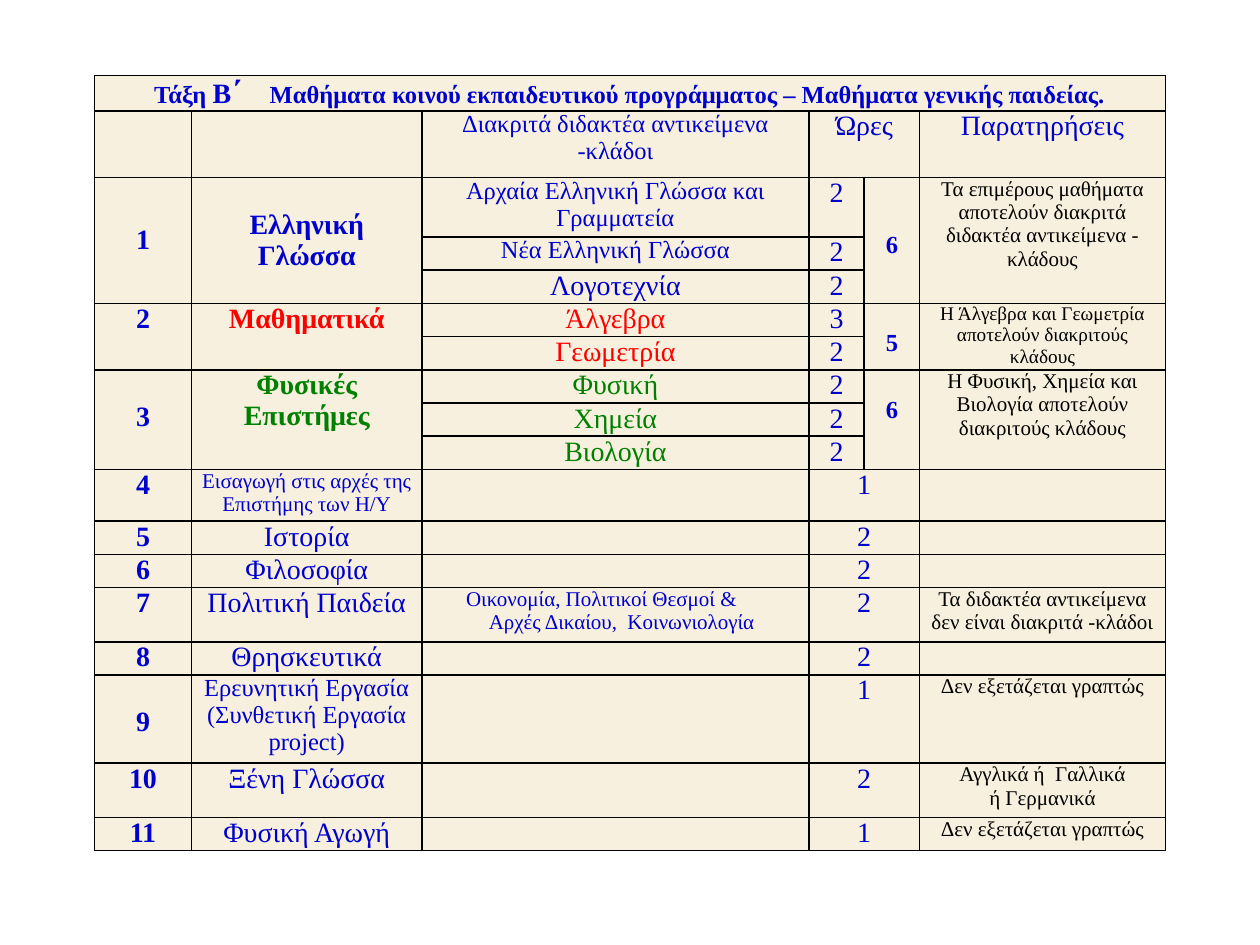
from dataclasses import dataclass

from lxml.etree import SubElement
from pptx import Presentation
from pptx.dml.color import RGBColor
from pptx.enum.text import MSO_ANCHOR as Anchor, PP_ALIGN as Align
from pptx.oxml.ns import qn
from pptx.util import Inches, Pt

BLUE, RED, GREEN, BLACK, CREAM = "0000CC", "FF0000", "008000", "000000", "F7F0DE"
COLUMNS = [0.77, 1.83, 3.07, 0.44, 0.44, 1.95]
NUMBER, SUBJECT, BRANCH, HOURS, TOTAL, NOTE = range(6)
LINE = 19 / 72  # height of a row with one line of 16 pt text
TITLE_ROW, HEADER_ROW = 0.28, 0.53


def rgb(value):
    return RGBColor.from_string(value)


@dataclass
class Subject:
    name: str
    hours: str
    heights: tuple = (LINE,)
    branches: tuple = ()  # (name, size, hours)
    note: str = ""
    size: int = 16
    colour: str = BLUE
    bold: bool = False
    note_size: int = 12
    anchor: Anchor = Anchor.TOP
    number_top: float = 0
    total_top: float = 0


SUBJECTS = [
    Subject("Ελληνική Γλώσσα", "6", (0.47, LINE, LINE),
            (("Αρχαία Ελληνική Γλώσσα και Γραμματεία", 14, "2"),
             ("Νέα Ελληνική Γλώσσα", 14, "2"),
             ("Λογοτεχνία", 16, "2")),
            "Τα επιμέρους μαθήματα αποτελούν διακριτά διδακτέα αντικείμενα - κλάδους",
            bold=True, anchor=Anchor.MIDDLE, total_top=0.43),
    Subject("Μαθηματικά", "5", (LINE, LINE),
            (("Άλγεβρα", 16, "3"), ("Γεωμετρία", 16, "2")),
            "Η Άλγεβρα και Γεωμετρία αποτελούν διακριτούς κλάδους",
            colour=RED, bold=True, note_size=11, total_top=0.21),
    Subject("Φυσικές Επιστήμες", "6", (LINE, LINE, LINE),
            (("Φυσική", 16, "2"), ("Χημεία", 16, "2"), ("Βιολογία", 16, "2")),
            "Η Φυσική, Χημεία και Βιολογία αποτελούν διακριτούς κλάδους",
            colour=GREEN, bold=True, number_top=0.25, total_top=0.21),
    Subject("Εισαγωγή στις αρχές της Επιστήμης των Η/Υ", "1", (0.41,), size=12),
    Subject("Ιστορία", "2"),
    Subject("Φιλοσοφία", "2"),
    Subject("Πολιτική Παιδεία", "2", (0.43,),
            note="Τα διδακτέα αντικείμενα δεν είναι διακριτά -κλάδοι"),
    Subject("Θρησκευτικά", "2"),
    Subject("Ερευνητική Εργασία (Συνθετική Εργασία project)", "1", (0.7,),
            note="Δεν εξετάζεται γραπτώς", size=14, number_top=0.25),
    Subject("Ξένη Γλώσσα", "2", (0.43,), note="Αγγλικά ή  Γαλλικά\nή Γερμανικά"),
    Subject("Φυσική Αγωγή", "1", note="Δεν εξετάζεται γραπτώς"),
]
CIVICS_TOPICS = "Οικονομία, Πολιτικοί Θεσμοί &\nΑρχές Δικαίου,  Κοινωνιολογία"


class TimetableSlide:
    """Holds the slide, its table and the common cell style."""
    font = "Times New Roman"

    def __init__(self, slide):
        self.slide = slide
        self.table = None

    def add_table(self, left, top, widths, heights):
        frame = self.slide.shapes.add_table(
            len(heights), len(widths), Inches(left), Inches(top),
            Inches(sum(widths)), Inches(sum(heights)))
        self.table = frame.table
        self.table.first_row = self.table.horz_banding = False
        for column, width in zip(self.table.columns, widths):
            column.width = Inches(width)
        for row, height in zip(self.table.rows, heights):
            row.height = Inches(height)
        for cell in self.table.iter_cells():
            self.style_cell(cell)

    def style_cell(self, cell):
        properties = cell._tc.get_or_add_tcPr()
        for side in ("a:lnL", "a:lnR", "a:lnT", "a:lnB"):
            border = SubElement(properties, qn(side), w=str(Pt(1)))
            fill = SubElement(border, qn("a:solidFill"))
            SubElement(fill, qn("a:srgbClr"), val=BLACK)
        cell.fill.solid()
        cell.fill.fore_color.rgb = rgb(CREAM)
        cell.margin_left = cell.margin_right = Inches(0.05)
        cell.margin_top = cell.margin_bottom = 0
        # An empty cell must not make its row taller than one line
        SubElement(cell.text_frame.paragraphs[0]._p, qn("a:endParaRPr"), sz="1200")

    def style_run(self, run, size, colour, bold):
        run.font.name = self.font
        run.font.size = Pt(size)
        run.font.bold = bold
        run.font.color.rgb = rgb(colour)

    def merge(self, row, column, rows=1, columns=1):
        cell = self.table.cell(row, column)
        if rows * columns > 1:
            cell.merge(self.table.cell(row + rows - 1, column + columns - 1))
        return cell

    def fill_cell(self, row, column, text, size=16, colour=BLUE, bold=False,
                  rows=1, columns=1, anchor=Anchor.TOP, top=0):
        cell = self.merge(row, column, rows, columns)
        if not text:
            return cell
        cell.text_frame.text = text
        cell.vertical_anchor = anchor
        cell.margin_top = Inches(top)
        for paragraph in cell.text_frame.paragraphs:
            paragraph.alignment = Align.CENTER
            for run in paragraph.runs:
                self.style_run(run, size, colour, bold)
        return cell

    def fill_title(self, parts):
        """Fill the top row with (text, size, letter spacing) parts."""
        paragraph = self.merge(0, 0, columns=len(COLUMNS)).text_frame.paragraphs[0]
        paragraph.alignment = Align.CENTER
        for text, size, spacing in parts:
            run = paragraph.add_run()
            run.text = text
            self.style_run(run, size, BLUE, True)
            if spacing:
                run._r.get_or_add_rPr().set("spc", str(spacing * 100))

    def fill_subject(self, row, number, subject):
        span = len(subject.heights)
        self.fill_cell(row, NUMBER, str(number), bold=True, rows=span,
                       anchor=subject.anchor, top=subject.number_top)
        self.fill_cell(row, SUBJECT, subject.name, subject.size, subject.colour,
                       subject.bold, rows=span, anchor=subject.anchor)
        self.fill_cell(row, NOTE, subject.note, subject.note_size, BLACK, rows=span)
        if not subject.branches:
            self.fill_cell(row, HOURS, subject.hours, columns=2)
            return
        self.fill_cell(row, TOTAL, subject.hours, 14, bold=True, rows=span,
                       top=subject.total_top)
        for offset, (name, size, hours) in enumerate(subject.branches):
            self.fill_cell(row + offset, BRANCH, name, size, subject.colour)
            self.fill_cell(row + offset, HOURS, hours)


def main():
    deck = Presentation()
    deck.slide_width, deck.slide_height = Inches(10), Inches(7.5)
    timetable = TimetableSlide(deck.slides.add_slide(deck.slide_layouts[6]))

    heights = [TITLE_ROW, HEADER_ROW]
    for subject in SUBJECTS:
        heights.extend(subject.heights)
    timetable.add_table(0.75, 0.6, COLUMNS, heights)

    timetable.fill_title([
        ("Τάξη ", 14, 0), ("Β", 16, 0), ("΄", 18, 0), (" ", 16, 12),
        ("Μαθήματα κοινού εκπαιδευτικού προγράμματος – Μαθήματα γενικής παιδείας.", 14, 0)])
    timetable.fill_cell(1, BRANCH, "Διακριτά διδακτέα αντικείμενα -κλάδοι", 14)
    timetable.fill_cell(1, HOURS, "Ώρες", columns=2)
    timetable.fill_cell(1, NOTE, "Παρατηρήσεις")

    row = 2
    for number, subject in enumerate(SUBJECTS, 1):
        timetable.fill_subject(row, number, subject)
        if subject.name == "Πολιτική Παιδεία":
            topics = timetable.fill_cell(row, BRANCH, CIVICS_TOPICS, 12)
            first, second = topics.text_frame.paragraphs
            first._p.get_or_add_pPr().set("marR", str(Inches(0.22)))
            second._p.get_or_add_pPr().set("marL", str(Inches(0.32)))
        row += len(subject.heights)

    deck.save("out.pptx")


if __name__ == "__main__":
    main()
